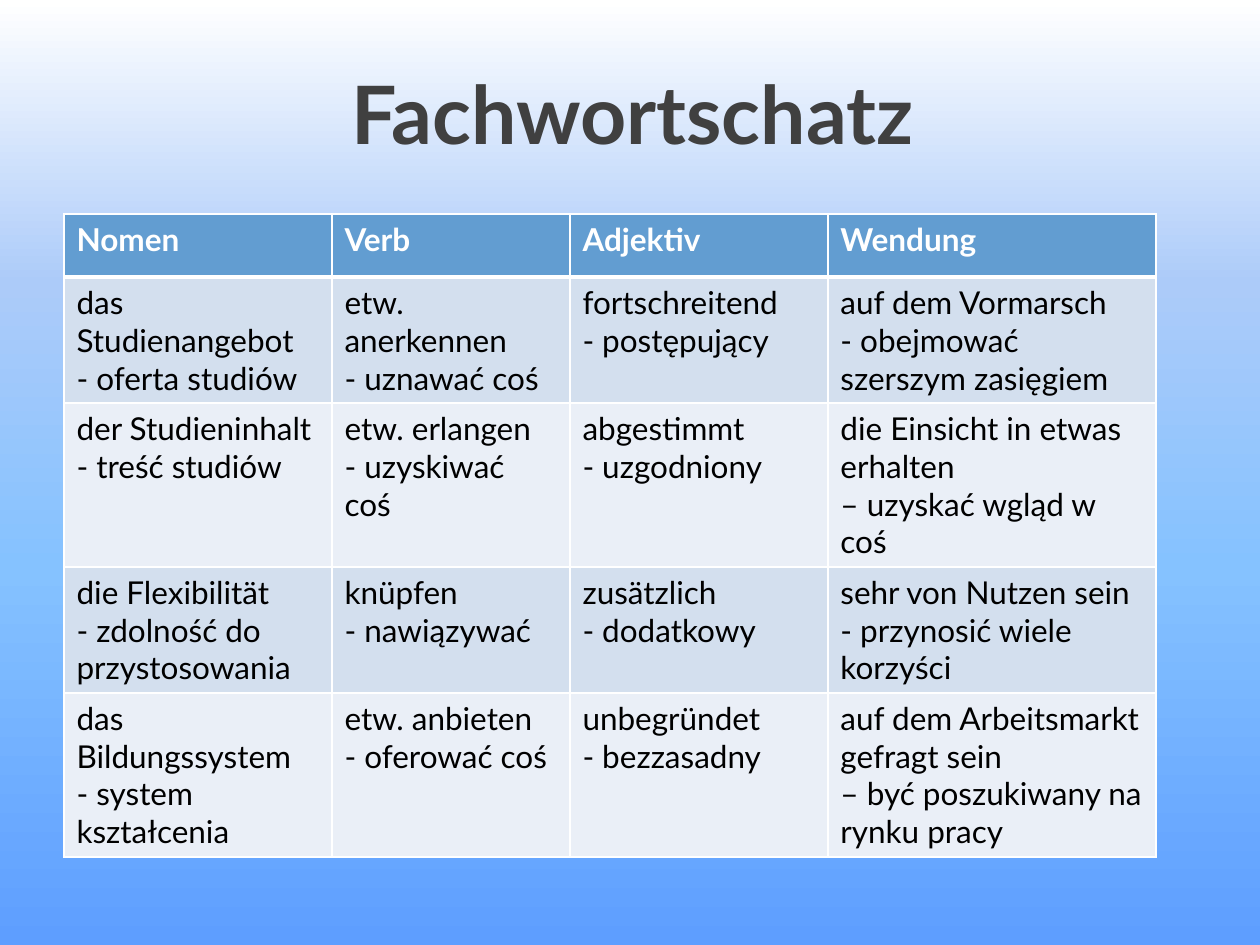
"""Build a vocabulary slide with a title and a table of study terms."""
from lxml.etree import SubElement
from pptx import Presentation
from pptx.dml.color import RGBColor as Rgb
from pptx.enum.text import MSO_ANCHOR as Anchor, PP_ALIGN as Align
from pptx.oxml import parse_xml
from pptx.oxml.ns import nsdecls, qn
from pptx.util import Emu, Pt

FONT = "Lato"
COLORS = {"title": "404040", "head": "629DD1", "odd": "D3DFEE",
          "even": "EAEFF7", "line": "FFFFFF", "light": "FFFFFF",
          "dark": "000000"}
STOPS = {0: "5E9EFF", 40: "85C2FF", 70: "ACCBF9", 100: "FFFFFF"}
WIDTHS = [268, 238, 258, 328]
ROW = 63
TERMS = [
    ["Nomen", "Verb", "Adjektiv", "Wendung"],
    ["das Studienangebot\n- oferta studiów",
     "etw. anerkennen\n- uznawać coś",
     "fortschreitend\n- postępujący",
     "auf dem Vormarsch\n- obejmować szerszym zasięgiem"],
    ["der Studieninhalt\n- treść studiów",
     "etw. erlangen\n- uzyskiwać coś",
     "abgestimmt\n- uzgodniony",
     "die Einsicht in etwas erhalten\n– uzyskać wgląd w coś"],
    ["die Flexibilität\n- zdolność do przystosowania",
     "knüpfen\n- nawiązywać",
     "zusätzlich\n- dodatkowy",
     "sehr von Nutzen sein\n- przynosić wiele korzyści"],
    ["das Bildungssystem\n- system kształcenia",
     "etw. anbieten\n- oferować coś",
     "unbegründet\n- bezzasadny",
     "auf dem Arbeitsmarkt gefragt sein\n– być poszukiwany na rynku pracy"],
]


def px(n):
    return Emu(round(n * 914400 / 126))


def color(key):
    return Rgb.from_string(COLORS[key])


def style(par, size, key, bold):
    font = par.font
    font.name, font.size, font.bold = FONT, Pt(size), bold
    font.color.rgb = color(key)


def backdrop(slide):
    stops = "".join(
        f'<a:gs pos="{pos * 1000}"><a:srgbClr val="{tone}"/></a:gs>'
        for pos, tone in STOPS.items())
    grad = parse_xml(
        f'<a:gradFill {nsdecls("a")} rotWithShape="1"><a:gsLst>{stops}</a:gsLst>'
        '<a:lin ang="16200000" scaled="0"/></a:gradFill>')
    fill = slide.background.fill
    fill.solid()
    solid = slide.element.find(".//" + qn("p:bgPr")).find(qn("a:solidFill"))
    solid.getparent().replace(solid, grad)


def title(slide, text):
    box = slide.shapes.add_textbox(px(164), px(55), px(937), px(158))
    frame = box.text_frame
    frame.word_wrap = True
    frame.vertical_anchor = Anchor.TOP
    frame.margin_top = px(9)
    frame.text = text
    par = frame.paragraphs[0]
    par.alignment = Align.CENTER
    style(par, 46, "title", True)


def border(cell, side, width):
    props = cell._tc.get_or_add_tcPr()
    line = SubElement(props, qn(f"a:ln{side}"), w=str(Pt(width)))
    fill = SubElement(line, qn("a:solidFill"))
    SubElement(fill, qn("a:srgbClr"), val=COLORS["line"])


def fill_cell(cell, text, row):
    head = row == 0
    for side in "LRTB":
        thick = (row, side) in [(0, "B"), (1, "T")]
        border(cell, side, 3 if thick else 1)
    cell.fill.solid()
    tone = "head" if head else "odd" if row % 2 else "even"
    cell.fill.fore_color.rgb = color(tone)
    cell.text = text
    for par in cell.text_frame.paragraphs:
        style(par, 18, "light" if head else "dark", head)


def term_table(slide):
    frame = slide.shapes.add_table(
        len(TERMS), len(WIDTHS), px(64), px(214),
        px(sum(WIDTHS)), px(ROW * len(TERMS)))
    table = frame.table
    for col, width in zip(table.columns, WIDTHS):
        col.width = px(width)
    for r, terms in enumerate(TERMS):
        table.rows[r].height = px(ROW)
        for c, text in enumerate(terms):
            fill_cell(table.cell(r, c), text, r)


def main():
    deck = Presentation()
    deck.slide_width, deck.slide_height = px(1260), px(945)
    slide = deck.slides.add_slide(deck.slide_layouts[6])
    backdrop(slide)
    title(slide, "Fachwortschatz")
    term_table(slide)
    deck.save("out.pptx")


if __name__ == "__main__":
    main()
